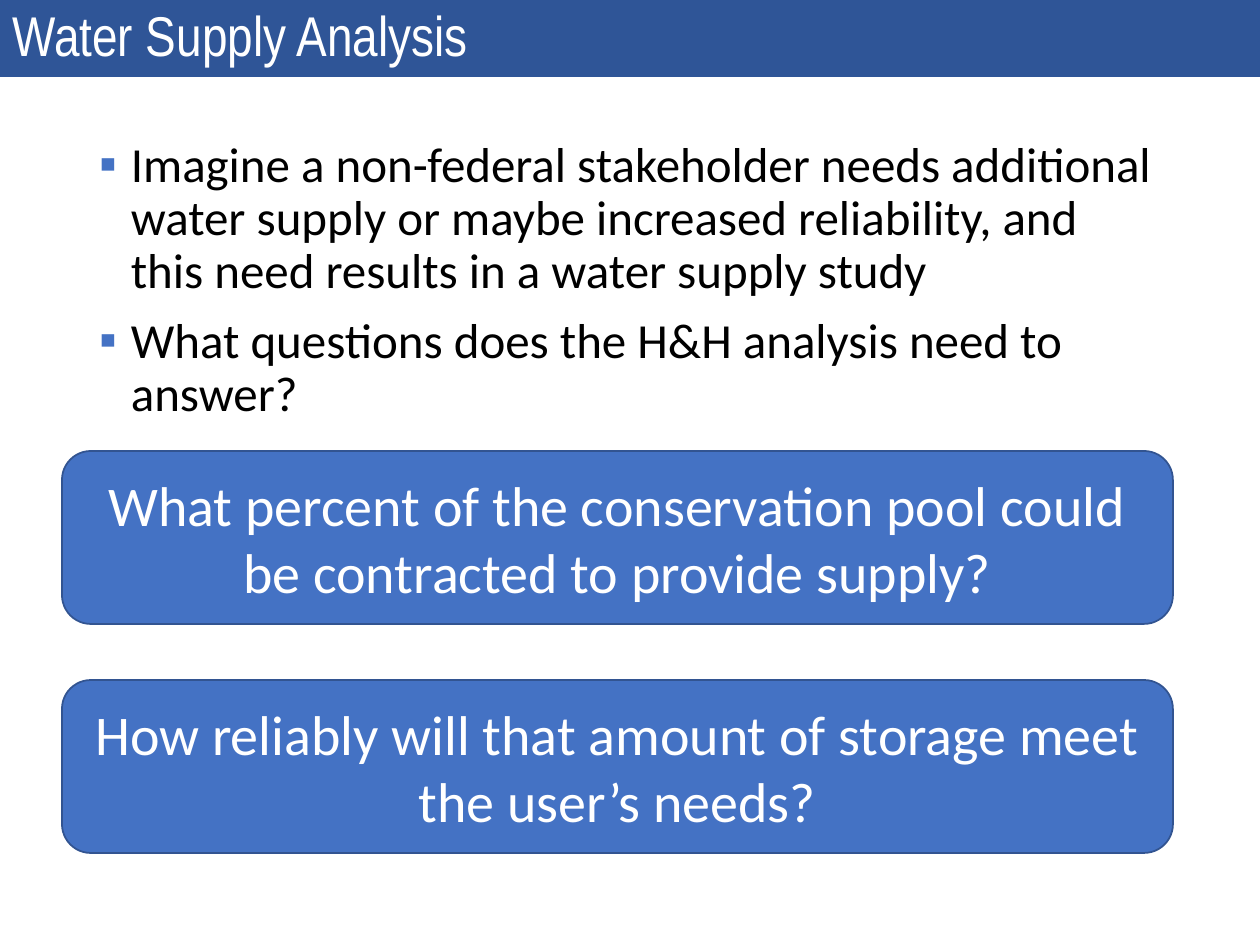
import pptx
import pptx.dml.color
import pptx.enum.shapes
import pptx.enum.text
import pptx.oxml
import pptx.oxml.ns
import pptx.util

SCALE = 914400 // 126
SHAPES = pptx.enum.shapes.MSO_SHAPE
ALIGN = pptx.enum.text.PP_ALIGN
ANCHOR = pptx.enum.text.MSO_ANCHOR


def px(length):
    return pptx.util.Emu(length * SCALE)


def color(value):
    return pptx.dml.color.RGBColor.from_string(value)


def apply(target, values):
    for name, value in values.items():
        setattr(target, name, value)


class SlideBuilder:
    title_font = {"name": "Arial Narrow", "size": pptx.util.Pt(32)}
    body_font = {"name": "Calibri", "size": pptx.util.Pt(28)}
    question_font = {"name": "Calibri", "size": pptx.util.Pt(32)}
    white, black = "FFFFFF", "000000"
    banner, accent, outline = "2F5597", "4472C4", "325491"

    def __init__(self, slide):
        self.slide = slide

    def fill_paragraph(self, paragraph, text, font, font_color, layout):
        paragraph.text = text
        apply(paragraph, layout)
        apply(paragraph.font, font)
        paragraph.font.color.rgb = color(font_color)

    def block(self, kind, box, fill, text, font, layout):
        shape = self.slide.shapes.add_shape(kind, *map(px, box))
        shape.shadow.inherit = False
        shape.fill.solid()
        shape.fill.fore_color.rgb = color(fill)
        frame = shape.text_frame
        apply(frame, {"word_wrap": True, "vertical_anchor": ANCHOR.MIDDLE})
        self.fill_paragraph(frame.paragraphs[0], text, font, self.white, layout)
        return shape

    def title(self, box, text):
        layout = {"alignment": ALIGN.LEFT, "line_spacing": 0.9}
        shape = self.block(SHAPES.RECTANGLE, box, self.banner, text, self.title_font, layout)
        shape.line.fill.background()

    def question(self, box, text):
        layout = {"alignment": ALIGN.CENTER}
        shape = self.block(SHAPES.ROUNDED_RECTANGLE, box, self.accent, text, self.question_font, layout)
        shape.line.color.rgb = color(self.outline)
        shape.line.width = pptx.util.Pt(1)

    def add_bullet(self, paragraph):
        properties = paragraph._p.get_or_add_pPr()
        properties.set("marL", str(pptx.util.Inches(0.25)))
        properties.set("indent", str(-pptx.util.Inches(0.25)))
        namespace = pptx.oxml.ns.nsdecls("a")
        for element in (
            f'<a:buClr {namespace}><a:srgbClr val="{self.accent}"/></a:buClr>',
            f'<a:buFont {namespace} typeface="Calibri"/>',
            f'<a:buChar {namespace} char="▪"/>',
        ):
            properties.append(pptx.oxml.parse_xml(element))

    def bullets(self, box, texts):
        frame = self.slide.shapes.add_textbox(*map(px, box)).text_frame
        frame.word_wrap = True
        for index, text in enumerate(texts):
            paragraph = frame.add_paragraph() if index else frame.paragraphs[0]
            self.add_bullet(paragraph)
            layout = {"line_spacing": 0.9, "space_before": pptx.util.Pt(10 if index else 0)}
            self.fill_paragraph(paragraph, text, self.body_font, self.black, layout)


def main():
    presentation = pptx.Presentation()
    apply(presentation, {"slide_width": px(1260), "slide_height": px(945)})
    builder = SlideBuilder(presentation.slides.add_slide(presentation.slide_layouts[6]))
    builder.title((0, 0, 1260, 77), "Water Supply Analysis")
    builder.bullets((87, 134, 1086, 717), [
        "Imagine a non-federal stakeholder needs additional water supply or maybe "
        "increased reliability, and this need results in a water supply study",
        "What questions does the H&H analysis need to answer?",
    ])
    questions = [
        "What percent of the conservation pool could be contracted to provide supply?",
        "How reliably will that amount of storage meet the user’s needs?",
    ]
    for index, text in enumerate(questions):
        builder.question((62, 451 + index * 229, 1111, 173), text)
    presentation.save("out.pptx")


if __name__ == "__main__":
    main()
